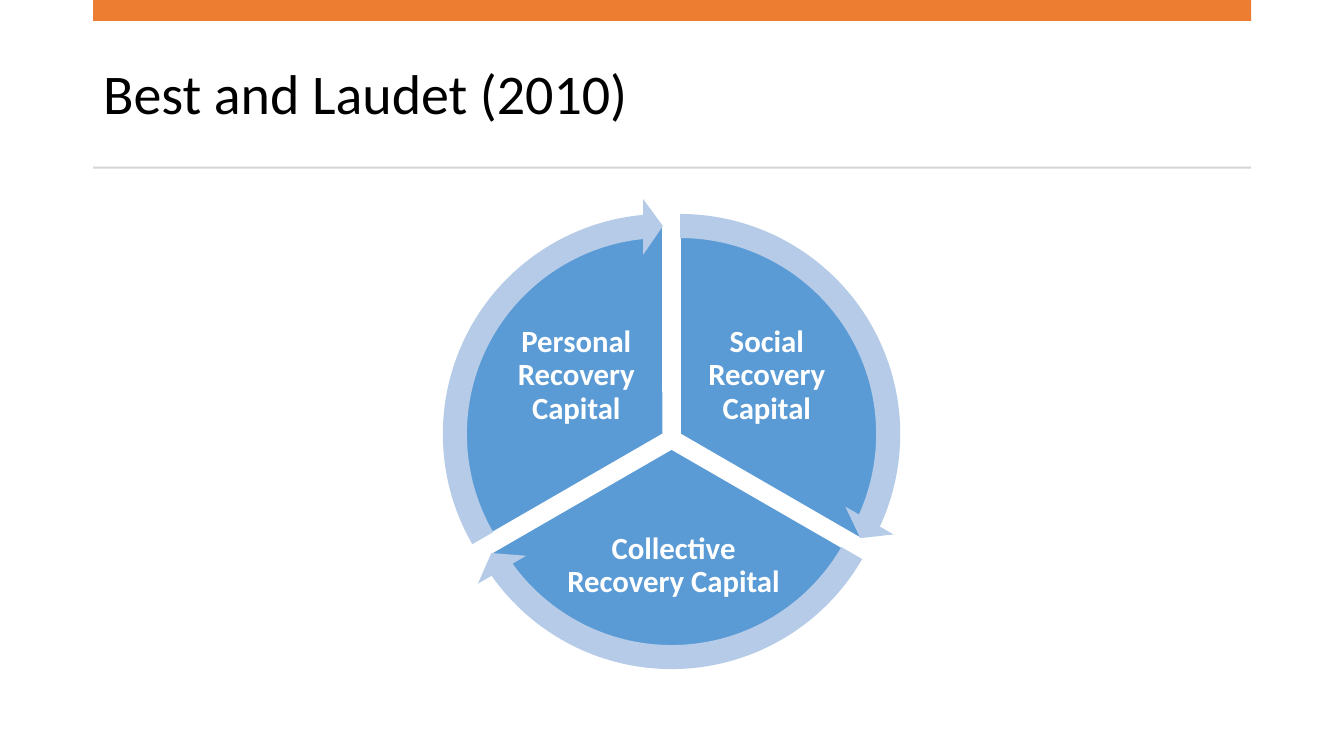
from math import cos, radians, sin

from pptx import Presentation
from pptx.dml.color import RGBColor
from pptx.enum.shapes import MSO_SHAPE
from pptx.enum.text import MSO_ANCHOR, PP_ALIGN
from pptx.util import Cm, Pt

ORANGE = RGBColor(0xED, 0x7D, 0x31)
GREY = RGBColor(0xD5, 0xD5, 0xD5)
BLUE = RGBColor(0x5B, 0x9B, 0xD5)
PALE_BLUE = RGBColor(0xB5, 0xCB, 0xE7)
WHITE = RGBColor(0xFF, 0xFF, 0xFF)
BLACK = RGBColor(0, 0, 0)

TITLE_FONT = {"name": "Calibri", "size": Pt(40)}
LABEL_FONT = {"name": "Calibri", "size": Pt(22), "bold": True}

# Label, its centre relative to the hub and its size, all in cm
SECTORS = [
    ("Social Recovery Capital", 2.4, -1.59, 3.78, 3.15),
    ("Collective Recovery Capital", 0.05, 3.2, 5.66, 2.77),
    ("Personal Recovery Capital", -2.4, -1.59, 3.78, 3.15),
]


def centred(x, y, width, height):
    """Box in cm around a centre point."""
    return x - width / 2, y - height / 2, width, height


def add_filled(page, kind, box, color, adjustments=()):
    shape = page.shapes.add_shape(kind, *map(Cm, box))
    shape.shadow.inherit = False
    shape.fill.solid()
    shape.fill.fore_color.rgb = color
    shape.line.fill.background()
    for index, value in enumerate(adjustments):
        shape.adjustments[index] = value
    return shape


def add_text(page, box, text, font_format, color, align, inset=None):
    frame = page.shapes.add_textbox(*map(Cm, box)).text_frame
    frame.word_wrap = True
    frame.vertical_anchor = MSO_ANCHOR.MIDDLE
    if inset is not None:
        for side in ("left", "top", "right", "bottom"):
            setattr(frame, f"margin_{side}", Cm(inset))
    para = frame.paragraphs[0]
    para.alignment = align
    para.line_spacing = 0.9
    span = para.add_run()
    span.text = text
    for name, value in font_format.items():
        setattr(span.font, name, value)
    span.font.color.rgb = color


def add_header(page, left, top, width, height):
    # Title between the top band and the thin rule
    add_text(page, (left, top + 0.94, width, 3), "Best and Laudet (2010)",
             TITLE_FONT, BLACK, PP_ALIGN.LEFT)
    add_filled(page, MSO_SHAPE.RECTANGLE, (left, top, width, 0.53), ORANGE)
    add_filled(page, MSO_SHAPE.RECTANGLE,
               (left, top + height - 0.05, width, 0.05), GREY)


def add_cycle(page, left, top, size):
    hub_x, hub_y = left + size / 2, top + size / 2
    pie_size = 0.89 * size
    push = 0.25  # distance of each sector from the hub
    head = 3.275  # angle taken by an arrowhead, in 100000ths of a unit
    arrows = []

    # Sectors with their labels
    for index, (text, dx, dy, width, height) in enumerate(SECTORS):
        middle = radians(120 * index - 30)
        x, y = hub_x + push * cos(middle), hub_y + push * sin(middle)
        start, end = (162 + 72 * index) % 216, 18 + 72 * index
        pie = add_filled(page, MSO_SHAPE.PIE, centred(x, y, pie_size, pie_size),
                         BLUE, (start, end))
        pie.line.color.rgb = WHITE
        pie.line.width = Pt(1)
        add_text(page, centred(hub_x + dx, hub_y + dy, width, height), text,
                 LABEL_FONT, WHITE, PP_ALIGN.CENTER, inset=0.08)
        arrows.append((centred(x, y, size, size),
                       (0.051, head, end - head, start, 0.059)))

    # Arrows around the sectors, on top
    for box, adjustments in arrows:
        add_filled(page, MSO_SHAPE.CIRCULAR_ARROW, box, PALE_BLUE, adjustments)


def main():
    deck = Presentation()
    deck.slide_width, deck.slide_height = Cm(33.87), Cm(19.05)
    page = deck.slides.add_slide(deck.slide_layouts[6])
    add_header(page, 2.35, 0, 29.18, 4.25)
    add_cycle(page, 10.98, 5.12, 11.89)
    deck.save("out.pptx")


if __name__ == "__main__":
    main()
